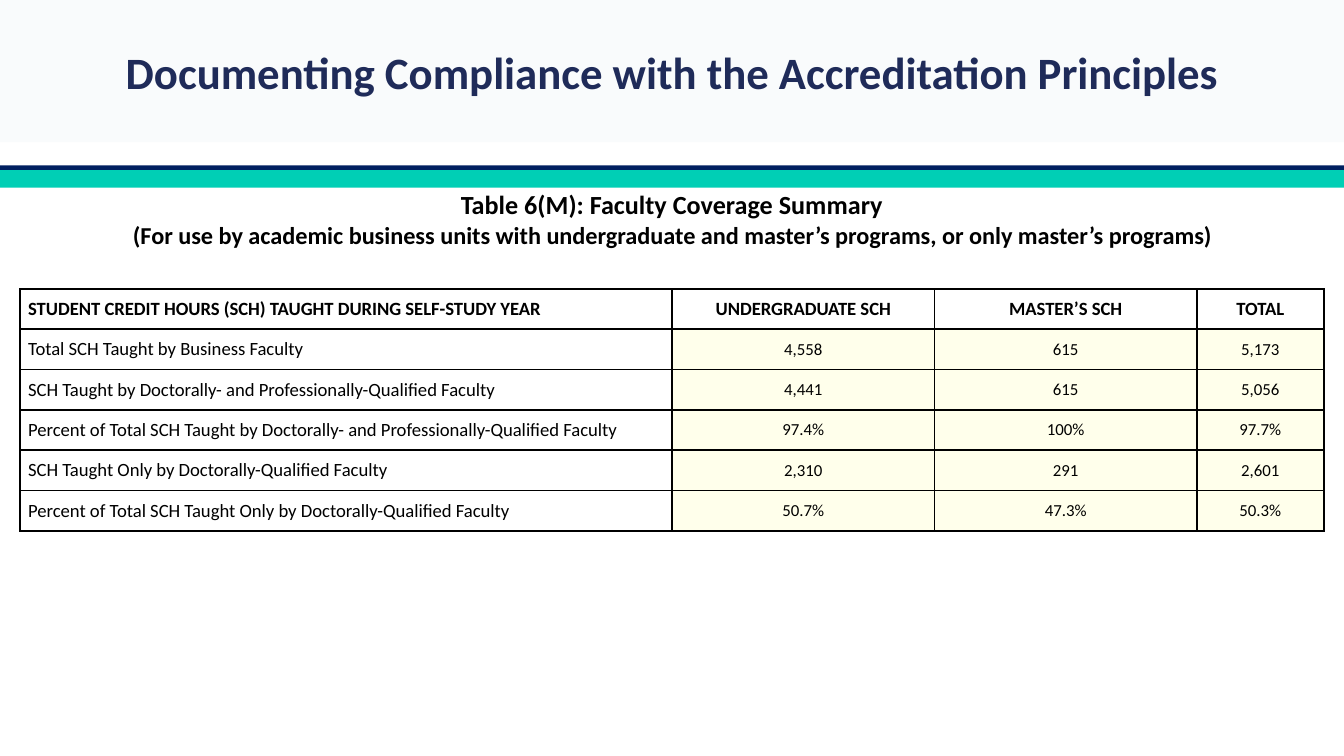
"""Build the faculty coverage summary slide."""
import pptx
import pptx.dml.color
import pptx.enum.shapes
import pptx.enum.text
import pptx.oxml
import pptx.oxml.ns
import pptx.util
from lxml import etree

Pt = pptx.util.Pt
RGBColor = pptx.dml.color.RGBColor
ALIGN = pptx.enum.text.PP_ALIGN
MIDDLE = pptx.enum.text.MSO_ANCHOR.MIDDLE
qn = pptx.oxml.ns.qn

NAVY = RGBColor(0x00, 0x20, 0x60)
TEAL = RGBColor(0x00, 0xCF, 0xB5)
TITLE_BLUE = RGBColor(0x1F, 0x2B, 0x59)
PALE_BLUE = RGBColor(0xE8, 0xF0, 0xF4)
CREAM = RGBColor(0xFF, 0xFF, 0xEB)
WHITE = RGBColor(0xFF, 0xFF, 0xFF)
BLACK = RGBColor(0x00, 0x00, 0x00)

TITLE = "Documenting Compliance with the Accreditation Principles"
CAPTION = [
    ("Table 6(M): Faculty Coverage Summary", 14),
    ("(For use by academic business units with undergraduate and master’s programs, "
     "or only master’s programs)", 13),
]
ROWS = [
    ("STUDENT CREDIT HOURS (SCH) TAUGHT DURING SELF-STUDY YEAR",
     "UNDERGRADUATE SCH", "MASTER’S SCH", "TOTAL"),
    ("Total SCH Taught by Business Faculty", "4,558", "615", "5,173"),
    ("SCH Taught by Doctorally- and Professionally-Qualified Faculty",
     "4,441", "615", "5,056"),
    ("Percent of Total SCH Taught by Doctorally- and Professionally-Qualified Faculty",
     "97.4%", "100%", "97.7%"),
    ("SCH Taught Only by Doctorally-Qualified Faculty", "2,310", "291", "2,601"),
    ("Percent of Total SCH Taught Only by Doctorally-Qualified Faculty",
     "50.7%", "47.3%", "50.3%"),
]

WIDTH, HEIGHT = 720, 405
TITLE_HEIGHT = 76.2
BODY_TOP = 91.2
BANDS = [
    (88.6, 16.6, NAVY),
    (BODY_TOP, HEIGHT - BODY_TOP, WHITE),
    (BODY_TOP, 9.4, TEAL),
]
TABLE_LEFT, TABLE_TOP = 10.8, 154.8
COLUMN_WIDTHS = [349.2, 140.6, 140.6, 68]
ROW_HEIGHT = 21.6


def write(paragraph, text, size=10, color=BLACK, bold=False, align=ALIGN.CENTER, spacing=0):
    paragraph.alignment = align
    paragraph.space_before = paragraph.space_after = Pt(spacing)
    run = paragraph.add_run()
    run.text = text
    run.font.name = "Calibri"
    run.font.size = Pt(size)
    run.font.bold = bold
    run.font.color.rgb = color


def set_margins(target, left, top, right, bottom):
    target.margin_left, target.margin_top = Pt(left), Pt(top)
    target.margin_right, target.margin_bottom = Pt(right), Pt(bottom)


def add_bands(slide):
    for top, height, color in BANDS:
        band = slide.shapes.add_shape(
            pptx.enum.shapes.MSO_SHAPE.RECTANGLE, 0, Pt(top), Pt(WIDTH), Pt(height))
        band.shadow.inherit = False
        band.fill.solid()
        band.fill.fore_color.rgb = color
        band.line.fill.background()


def format_title(slide):
    title = slide.shapes.title
    title.left, title.top, title.width, title.height = 0, 0, Pt(WIDTH), Pt(TITLE_HEIGHT)
    title.fill.solid()
    title.fill.fore_color.rgb = PALE_BLUE
    color = next(title.element.spPr.iter(qn("a:srgbClr")))
    etree.SubElement(color, qn("a:alpha"), val="25000")
    frame = title.text_frame
    frame.auto_size = pptx.enum.text.MSO_AUTO_SIZE.NONE
    frame.vertical_anchor = MIDDLE
    set_margins(frame, 0, 0, 0, 0)
    write(frame.paragraphs[0], TITLE, size=24, color=TITLE_BLUE, bold=True)


def add_caption(slide):
    box = slide.shapes.add_textbox(0, Pt(BODY_TOP), Pt(WIDTH), Pt(HEIGHT - BODY_TOP))
    frame = box.text_frame
    frame.word_wrap = True
    set_margins(frame, 14.4, 9.8, 14.4, 0)
    for index, (text, size) in enumerate(CAPTION):
        paragraph = frame.add_paragraph() if index else frame.paragraphs[0]
        write(paragraph, text, size=size, bold=True)


def add_borders(cell):
    properties = cell._tc.get_or_add_tcPr()
    for side in ("a:lnL", "a:lnR", "a:lnT", "a:lnB"):
        line = etree.SubElement(properties, qn(side), w=str(Pt(1)))
        fill = etree.SubElement(line, qn("a:solidFill"))
        etree.SubElement(fill, qn("a:srgbClr"), val=str(BLACK))


def add_coverage_table(slide):
    table = slide.shapes.add_table(
        len(ROWS), len(COLUMN_WIDTHS), Pt(TABLE_LEFT), Pt(TABLE_TOP),
        Pt(sum(COLUMN_WIDTHS)), Pt(ROW_HEIGHT * len(ROWS))).table
    table.first_row = table.horz_banding = False
    for column, width in zip(table.columns, COLUMN_WIDTHS):
        column.width = Pt(width)
    for row_index, texts in enumerate(ROWS):
        table.rows[row_index].height = Pt(ROW_HEIGHT)
        for column_index, text in enumerate(texts):
            cell = table.cell(row_index, column_index)
            is_header, is_label = row_index == 0, column_index == 0
            margin = 4.3 if is_label else 0
            set_margins(cell, margin, 0, margin, 0)
            cell.vertical_anchor = MIDDLE
            add_borders(cell)
            if is_header or is_label:
                cell.fill.background()
            else:
                cell.fill.solid()
                cell.fill.fore_color.rgb = CREAM
            write(cell.text_frame.paragraphs[0], text,
                  size=10 if is_header or is_label else 9, bold=is_header,
                  align=ALIGN.LEFT if is_label else ALIGN.CENTER, spacing=3)


def main():
    presentation = pptx.Presentation()
    presentation.slide_width, presentation.slide_height = Pt(WIDTH), Pt(HEIGHT)
    slide = presentation.slides.add_slide(presentation.slide_layouts[5])
    add_bands(slide)
    format_title(slide)
    add_caption(slide)
    add_coverage_table(slide)
    presentation.save("out.pptx")


if __name__ == "__main__":
    main()
